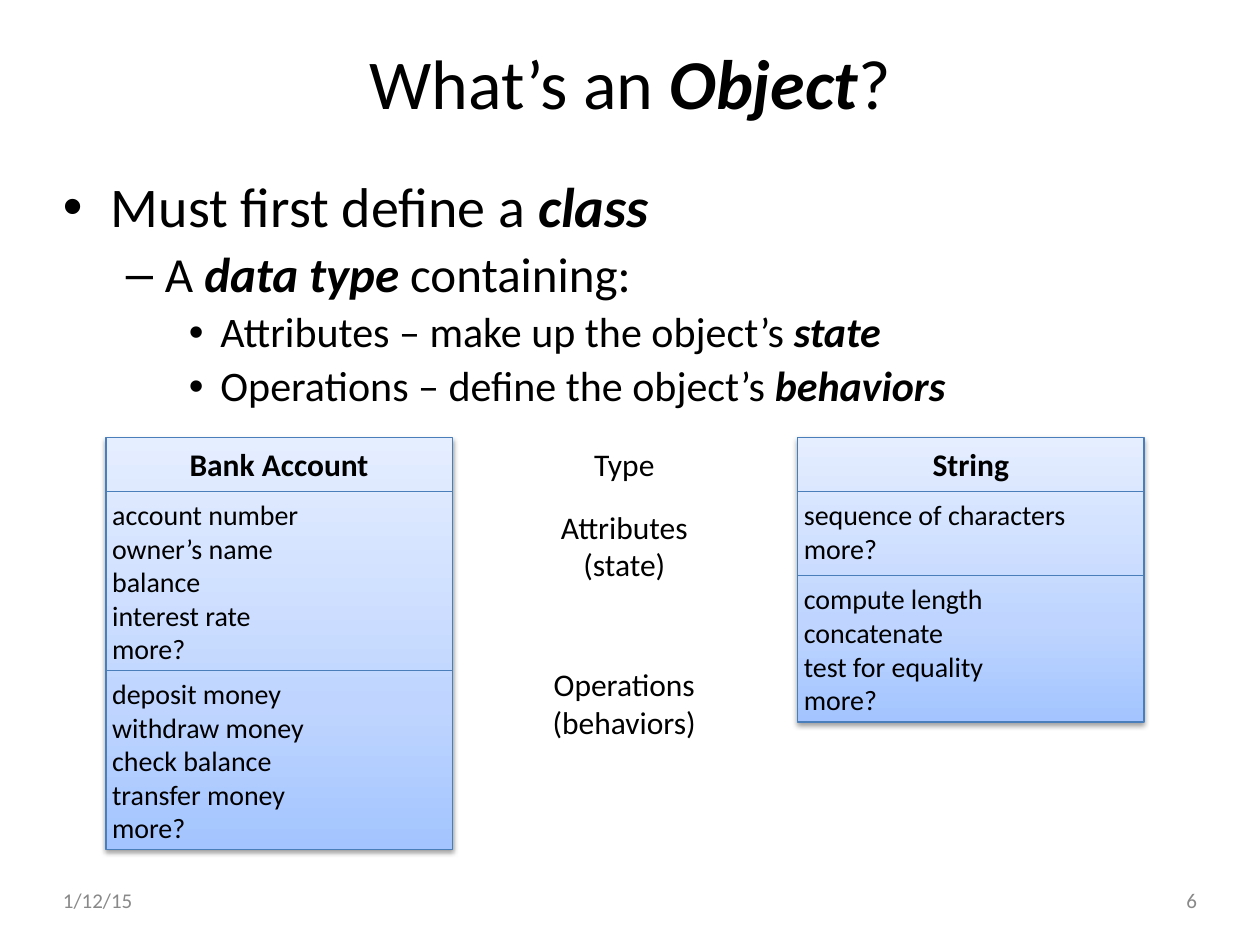
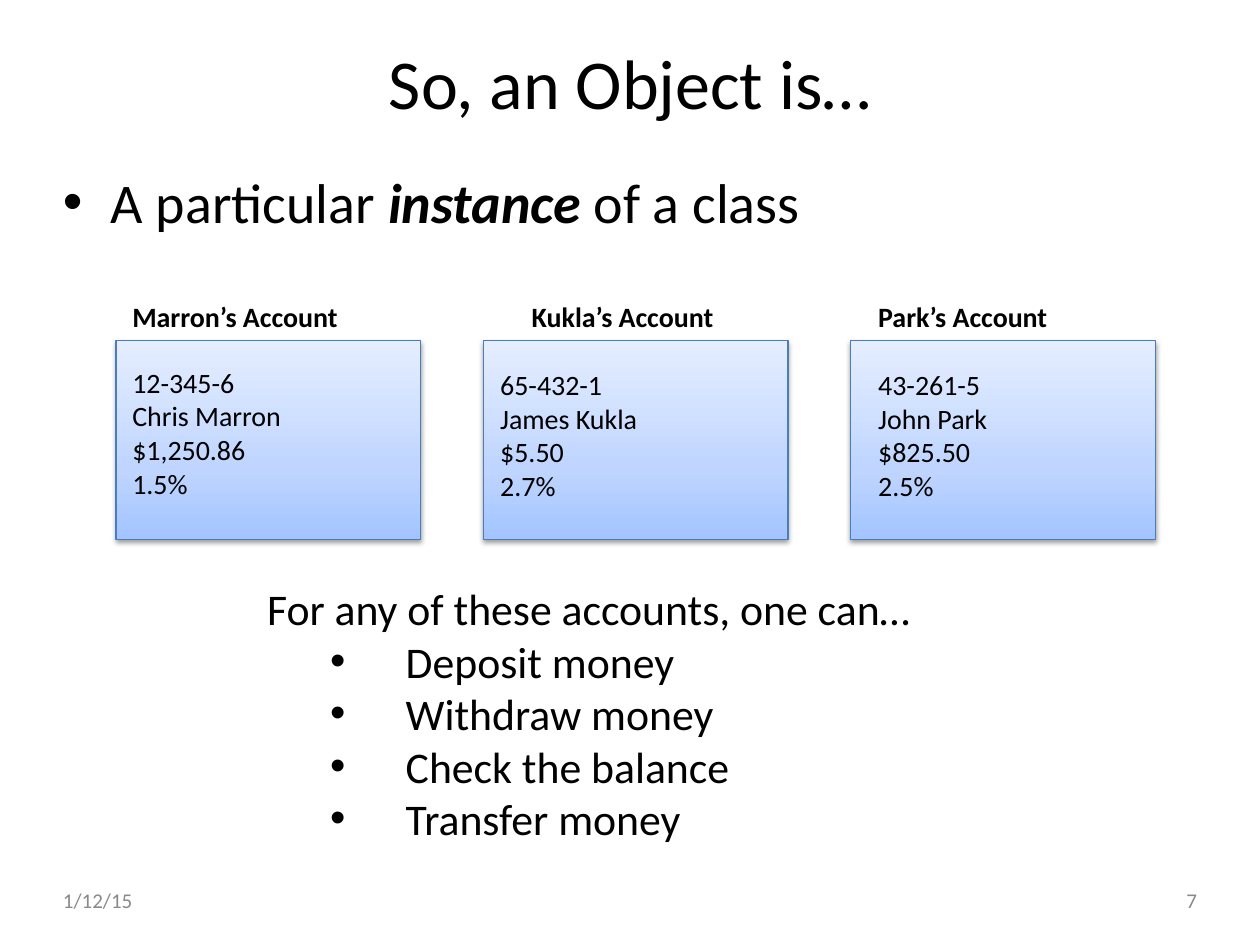
"""Build two slides that introduce classes and objects."""
from copy import deepcopy
from dataclasses import dataclass

from lxml.etree import SubElement
from pptx import Presentation
from pptx.dml.color import RGBColor
from pptx.enum.shapes import MSO_CONNECTOR, MSO_SHAPE
from pptx.enum.text import MSO_ANCHOR as Anchor, PP_ALIGN as Align
from pptx.oxml.ns import qn
from pptx.util import Inches, Pt

FONT = "Calibri"
BLACK = RGBColor(0x00, 0x00, 0x00)
GRAY = RGBColor(0x89, 0x89, 0x89)
BORDER = RGBColor(0x4A, 0x7E, 0xBB)
PANEL_GRADIENT = (
    (0, RGBColor(0xE5, 0xEE, 0xFF)),
    (0.65, RGBColor(0xBF, 0xD5, 0xFF)),
    (1, RGBColor(0xA3, 0xC4, 0xFF)),
)
DATE = "1/12/15"
INSET = 0.05


@dataclass(frozen=True)
class Style:
    size: float
    color: RGBColor = BLACK
    bold: bool = False
    align: Align = Align.LEFT


@dataclass(frozen=True)
class Level:
    style: Style
    margin: float
    indent: float
    bullet: str
    space_before: float


@dataclass(frozen=True)
class Section:
    height: float
    lines: tuple[str, ...]


@dataclass(frozen=True)
class ClassDiagram:
    left: float
    name: str
    header_height: float
    sections: tuple[Section, ...]


@dataclass(frozen=True)
class Account:
    label: str
    label_left: float
    text_left: float
    text_top: float
    values: tuple[str, ...]


TITLE = Style(40, align=Align.CENTER)
CLASS_NAME = Style(18, bold=True, align=Align.CENTER)
CAPTION = Style(18, align=Align.CENTER)
MEMBER = Style(16)
ACCOUNT_LABEL = Style(16, bold=True)
DATE_STYLE = Style(12, GRAY)
NUMBER_STYLE = Style(12, GRAY, align=Align.RIGHT)

BODY_LEVELS = (
    Level(Style(32), 0.38, -0.38, "•", 7),
    Level(Style(28), 0.81, -0.31, "–", 6),
    Level(Style(24), 1.25, -0.25, "•", 5),
)
ACTION_LEVELS = (
    Level(Style(25), 0.38, -0.38, "", 6),
    Level(Style(25), 1.1, -0.6, "•", 6),
)

DIAGRAM_TOP = 3.47
DIAGRAM_WIDTH = 2.75
DIAGRAMS = (
    ClassDiagram(0.84, "Bank Account", 0.43, (
        Section(1.42, ("account number", "owner’s name", "balance", "interest rate", "more?")),
        Section(1.42, ("deposit money", "withdraw money", "check balance",
                       "transfer money", "more?")),
    )),
    ClassDiagram(6.33, "String", 0.43, (
        Section(0.67, ("sequence of characters", "more?")),
        Section(1.16, ("compute length", "concatenate", "test for equality", "more?")),
    )),
)
CAPTIONS = (
    (3.48, 0.39, ("Type",)),
    (3.98, 0.69, ("Attributes", "(state)")),
    (5.23, 0.69, ("Operations", "(behaviors)")),
)

CARD_LEFT, CARD_TOP, CARD_WIDTH, CARD_HEIGHT = 0.92, 2.7, 2.42, 1.58
CARD_PITCH = 2.915
ACCOUNTS = (
    Account("Marron’s Account", 1, 1, 2.85,
            ("12-345-6", "Chris Marron", "$1,250.86", "1.5%")),
    Account("Kukla’s Account", 4.17, 3.92, 2.87,
            ("65-432-1", "James Kukla", "$5.50", "2.7%")),
    Account("Park’s Account", 6.92, 6.92, 2.87,
            ("43-261-5", "John Park", "$825.50", "2.5%")),
)


def set_font(font, style: Style) -> None:
    """Apply a style to a paragraph or run font."""
    font.name = FONT
    font.size = Pt(style.size)
    font.bold = style.bold
    font.color.rgb = style.color


def add_rich_runs(paragraph, text: str, style: Style) -> None:
    """Write text whose parts between asterisks are bold italic."""
    for index, part in enumerate(text.split("*")):
        if part:
            run = paragraph.add_run()
            run.text = part
            set_font(run.font, style)
            run.font.bold = run.font.italic = index % 2 == 1


def prepare_frame(frame, inset: float, anchor: Anchor) -> None:
    """Set wrapping, margins and anchor of a text frame."""
    frame.word_wrap = True
    frame.vertical_anchor = anchor
    frame.margin_left = frame.margin_right = Inches(inset)
    frame.margin_top = frame.margin_bottom = Inches(inset)


def add_frame(slide, left: float, top: float, width: float, height: float,
              inset: float = INSET, anchor: Anchor = Anchor.TOP):
    """Add a text box and return its frame."""
    box = slide.shapes.add_textbox(Inches(left), Inches(top), Inches(width), Inches(height))
    prepare_frame(box.text_frame, inset, anchor)
    return box.text_frame


def paragraphs_for(frame, lines):
    """Yield a paragraph of the frame with each line."""
    for index, line in enumerate(lines):
        yield (frame.add_paragraph() if index else frame.paragraphs[0]), line


def write_lines(frame, lines: tuple[str, ...], style: Style) -> None:
    """Write plain lines in one style."""
    for paragraph, line in paragraphs_for(frame, lines):
        paragraph.text = line
        paragraph.alignment = style.align
        set_font(paragraph.font, style)


def write_outline(frame, items: tuple[tuple[int, str], ...], levels: tuple[Level, ...],
                  line_spacing: float) -> None:
    """Write indented lines, with bullets where their level has one."""
    for paragraph, (depth, text) in paragraphs_for(frame, items):
        level = levels[depth]
        properties = paragraph._p.get_or_add_pPr()
        properties.set("marL", str(Inches(level.margin)))
        properties.set("indent", str(Inches(level.indent)))
        if level.bullet:
            SubElement(properties, qn("a:buFont"), typeface="Arial")
            SubElement(properties, qn("a:buChar"), char=level.bullet)
        paragraph.line_spacing = line_spacing
        paragraph.space_before = Pt(level.space_before)
        add_rich_runs(paragraph, text, level.style)


def add_panel(slide, left: float, top: float, width: float, height: float) -> None:
    """Add a rectangle with the blue gradient and a soft shadow."""
    panel = slide.shapes.add_shape(MSO_SHAPE.RECTANGLE, Inches(left), Inches(top),
                                   Inches(width), Inches(height))
    panel.fill.gradient()
    panel.fill.gradient_angle = 270
    properties = panel._element.spPr
    stop_list = properties.find(".//" + qn("a:gsLst"))
    stop_list.append(deepcopy(stop_list[0]))
    for stop, (position, color) in zip(panel.fill.gradient_stops, PANEL_GRADIENT):
        stop.position = position
        stop.color.rgb = color
    panel.line.color.rgb = BORDER
    panel.line.width = Pt(0.75)
    panel.shadow.inherit = False
    shadow = SubElement(properties.find(qn("a:effectLst")), qn("a:outerShdw"),
                        blurRad=str(Pt(3)), dist=str(Pt(1.6)), dir="5400000", rotWithShape="0")
    SubElement(SubElement(shadow, qn("a:srgbClr"), val=str(BLACK)), qn("a:alpha"), val="38000")


def add_divider(slide, left: float, top: float, width: float) -> None:
    """Add a thin horizontal line."""
    divider = slide.shapes.add_connector(MSO_CONNECTOR.STRAIGHT, Inches(left), Inches(top),
                                         Inches(left + width), Inches(top))
    divider.line.color.rgb = BORDER
    divider.line.width = Pt(0.75)
    SubElement(divider._element.spPr, qn("a:effectLst"))


def add_titled_slide(presentation, title: str, number: int):
    """Add a slide with its title, date and number."""
    slide = presentation.slides.add_slide(presentation.slide_layouts[5])
    placeholder = slide.shapes.title
    placeholder.left, placeholder.top = Inches(0.5), Inches(0.17)
    placeholder.width, placeholder.height = Inches(9), Inches(0.95)
    prepare_frame(placeholder.text_frame, 0, Anchor.MIDDLE)
    paragraph = placeholder.text_frame.paragraphs[0]
    paragraph.alignment = TITLE.align
    add_rich_runs(paragraph, title, TITLE)
    for left, text, style in ((0.5, DATE, DATE_STYLE), (7.17, str(number), NUMBER_STYLE)):
        write_lines(add_frame(slide, left, 7, 2.33, 0.29, 0, Anchor.MIDDLE), (text,), style)
    return slide


def add_class_diagram(slide, diagram: ClassDiagram) -> None:
    """Draw a class box with a name and its divided sections."""
    height = diagram.header_height + sum(section.height for section in diagram.sections)
    add_panel(slide, diagram.left, DIAGRAM_TOP, DIAGRAM_WIDTH, height)
    header = add_frame(slide, diagram.left, DIAGRAM_TOP + 0.01, DIAGRAM_WIDTH, 0.39)
    write_lines(header, (diagram.name,), CLASS_NAME)
    top = DIAGRAM_TOP + diagram.header_height
    for section in diagram.sections:
        add_divider(slide, diagram.left, top, DIAGRAM_WIDTH)
        frame = add_frame(slide, diagram.left, top, DIAGRAM_WIDTH, section.height)
        write_lines(frame, section.lines, MEMBER)
        top += section.height


def build_class_slide(presentation) -> None:
    """Explain classes with two class diagrams."""
    slide = add_titled_slide(presentation, "What’s an *Object*?", 6)
    write_outline(add_frame(slide, 0.5, 1.42, 9, 2, 0), (
        (0, "Must first define a *class*"),
        (1, "A *data type *containing:"),
        (2, "Attributes – make up the object’s *state*"),
        (2, "Operations – define the object’s *behaviors*"),
    ), BODY_LEVELS, 0.9)
    for diagram in DIAGRAMS:
        add_class_diagram(slide, diagram)
    for top, height, lines in CAPTIONS:
        write_lines(add_frame(slide, 4.12, top, 1.67, height), lines, CAPTION)


def build_instance_slide(presentation) -> None:
    """Show three accounts as instances of one class."""
    slide = add_titled_slide(presentation, "So, an Object is…", 7)
    write_outline(add_frame(slide, 0.5, 1.33, 9, 0.7, 0),
                  ((0, "A particular *instance* of a class"),), BODY_LEVELS, 1.0)
    for index, account in enumerate(ACCOUNTS):
        add_panel(slide, CARD_LEFT + index * CARD_PITCH, CARD_TOP, CARD_WIDTH, CARD_HEIGHT)
        label = add_frame(slide, account.label_left, 2.33, 2.25, 0.37)
        write_lines(label, (account.label,), ACCOUNT_LABEL)
        values = add_frame(slide, account.text_left, account.text_top, 1.92, 1.42)
        write_lines(values, account.values, MEMBER)
    write_outline(add_frame(slide, 2.07, 4.65, 5.95, 2.13), (
        (0, "For any of these accounts, one can…"),
        (1, "Deposit money"),
        (1, "Withdraw money"),
        (1, "Check the balance"),
        (1, "Transfer money"),
    ), ACTION_LEVELS, 0.8)


def main() -> None:
    """Build and save the presentation."""
    presentation = Presentation()
    presentation.slide_width, presentation.slide_height = Inches(10), Inches(7.5)
    build_class_slide(presentation)
    build_instance_slide(presentation)
    presentation.save("out.pptx")


if __name__ == "__main__":
    main()
